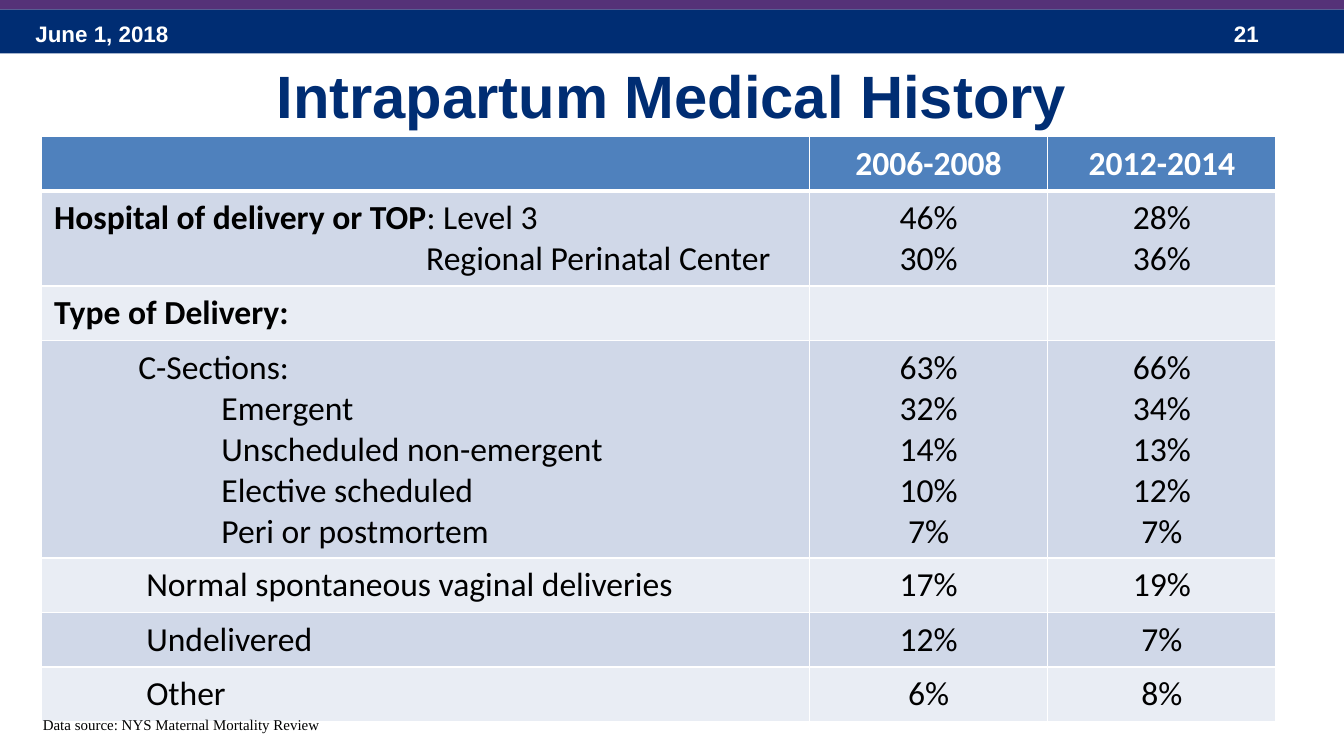
from lxml import etree
from pptx import Presentation
from pptx.dml.color import RGBColor
from pptx.enum.shapes import MSO_SHAPE as Preset
from pptx.enum.text import MSO_ANCHOR as Anchor, MSO_AUTO_SIZE as AutoSize, PP_ALIGN as Align
from pptx.oxml.ns import qn
from pptx.util import Cm, Pt

COLORS = {
    "navy": "002D73",
    "purple": "553278",
    "header": "4F81BD",
    "band_dark": "D0D8E8",
    "band_light": "E9EDF4",
    "white": "FFFFFF",
    "black": "000000",
}
COLUMN_WIDTHS = [14.53, 4.5, 4.32]
LINE_HEIGHT = 0.77
CELL_PADDING = 0.26
SECTION_INDENT = 1.59
DETAIL_INDENT = 3.16
OUTCOME_INDENT = 1.74
CENTER_INDENT = 7.03

HEADINGS = ["2006-2008", "2012-2014"]
ROWS = [
    [
        (0, [("Hospital of delivery or TOP", True), (": Level 3", False)], "46%", "28%"),
        (CENTER_INDENT, [("Regional Perinatal Center", False)], "30%", "36%"),
    ],
    [(0, [("Type of Delivery:", True)], "", "")],
    [
        (SECTION_INDENT, [("C-Sections:", False)], "63%", "66%"),
        (DETAIL_INDENT, [("Emergent", False)], "32%", "34%"),
        (DETAIL_INDENT, [("Unscheduled non-emergent", False)], "14%", "13%"),
        (DETAIL_INDENT, [("Elective scheduled", False)], "10%", "12%"),
        (DETAIL_INDENT, [("Peri or postmortem", False)], "7%", "7%"),
    ],
    [(OUTCOME_INDENT, [("Normal spontaneous vaginal deliveries", False)], "17%", "19%")],
    [(OUTCOME_INDENT, [("Undelivered", False)], "12%", "7%")],
    [(OUTCOME_INDENT, [("Other", False)], "6%", "8%")],
]


def color(name):
    return RGBColor.from_string(COLORS[name])


class SlideBuilder:
    def __init__(self, slide):
        self.slide = slide

    def run(self, paragraph, text, size, font, fill, bold=False):
        run = paragraph.add_run()
        run.text = text
        run.font.size = Pt(size)
        run.font.name = font
        run.font.bold = bold
        run.font.color.rgb = color(fill)

    def title(self, text, left, top, width, height):
        shape = self.slide.shapes.title
        shape.left, shape.top = Cm(left), Cm(top)
        shape.width, shape.height = Cm(width), Cm(height)
        shape.text_frame.vertical_anchor = Anchor.MIDDLE
        paragraph = shape.text_frame.paragraphs[0]
        paragraph.alignment = Align.CENTER
        self.run(paragraph, text, 32, "Arial", "navy", True)

    def bar(self, top, height, fill):
        shape = self.slide.shapes.add_shape(Preset.RECTANGLE, 0, Cm(top), Cm(25.4), Cm(height))
        shape.shadow.inherit = False
        shape.fill.solid()
        shape.fill.fore_color.rgb = color(fill)
        shape.line.fill.background()

    def label(self, text, left, top, width, height, size, font, fill, bold=False, wrap=True):
        box = self.slide.shapes.add_textbox(Cm(left), Cm(top), Cm(width), Cm(height))
        box.text_frame.word_wrap = wrap
        if not wrap:
            box.text_frame.auto_size = AutoSize.SHAPE_TO_FIT_TEXT
        self.run(box.text_frame.paragraphs[0], text, size, font, fill, bold)

    def cell(self, cell, lines, fill, text_fill="black", align=Align.LEFT, bottom_border=1):
        properties = cell._tc.get_or_add_tcPr()
        for side, width in (("L", 1), ("R", 1), ("T", 1), ("B", bottom_border)):
            border = etree.SubElement(properties, qn(f"a:ln{side}"), w=str(Pt(width)))
            solid = etree.SubElement(border, qn("a:solidFill"))
            etree.SubElement(solid, qn("a:srgbClr"), val=COLORS["white"])
        cell.fill.solid()
        cell.fill.fore_color.rgb = color(fill)
        frame = cell.text_frame
        for index, (indent, runs) in enumerate(lines):
            paragraph = frame.add_paragraph() if index else frame.paragraphs[0]
            paragraph.alignment = align
            paragraph.font.size = Pt(18)
            if indent:
                paragraph._p.get_or_add_pPr().set("marL", str(Cm(indent)))
            for text, bold in runs:
                if text:
                    self.run(paragraph, text, 18, "Calibri", text_fill, bold)

    def table(self, left, top):
        heights = [LINE_HEIGHT * len(lines) + CELL_PADDING for lines in [HEADINGS[:1]] + ROWS]
        table = self.slide.shapes.add_table(
            len(heights), len(COLUMN_WIDTHS), Cm(left), Cm(top),
            Cm(sum(COLUMN_WIDTHS)), Cm(sum(heights)),
        ).table
        for column, width in zip(table.columns, COLUMN_WIDTHS):
            column.width = Cm(width)
        for row, height in zip(table.rows, heights):
            row.height = Cm(height)
        for column, heading in enumerate([""] + HEADINGS):
            self.cell(table.cell(0, column), [(0, [(heading, True)])],
                      "header", "white", Align.CENTER, 3)
        for row, lines in enumerate(ROWS, start=1):
            fill = "band_dark" if row % 2 else "band_light"
            self.cell(table.cell(row, 0), [line[:2] for line in lines], fill)
            for column in (1, 2):
                values = [(0, [(line[column + 1], False)]) for line in lines]
                self.cell(table.cell(row, column), values, fill, align=Align.CENTER)


def main():
    presentation = Presentation()
    presentation.slide_width, presentation.slide_height = Cm(25.4), Cm(14.29)
    builder = SlideBuilder(presentation.slides.add_slide(presentation.slide_layouts[5]))
    builder.bar(0.18, 0.83, "navy")
    builder.label("June 1, 2018", 0.42, 0.25, 5.93, 0.76, 12, "Arial", "white", True)
    builder.label("21", 23.07, 0.25, 1.91, 0.76, 12, "Arial", "white", True)
    builder.bar(-0.05, 0.23, "purple")
    builder.title("Intrapartum Medical History", 1.27, 0.6, 22.86, 2.38)
    builder.table(0.77, 2.58)
    builder.label("Data source: NYS Maternal Mortality Review", 0.56, 13.4, 5.76, 0.6,
                  8, "Times New Roman", "black", wrap=False)
    presentation.save("out.pptx")


if __name__ == "__main__":
    main()
